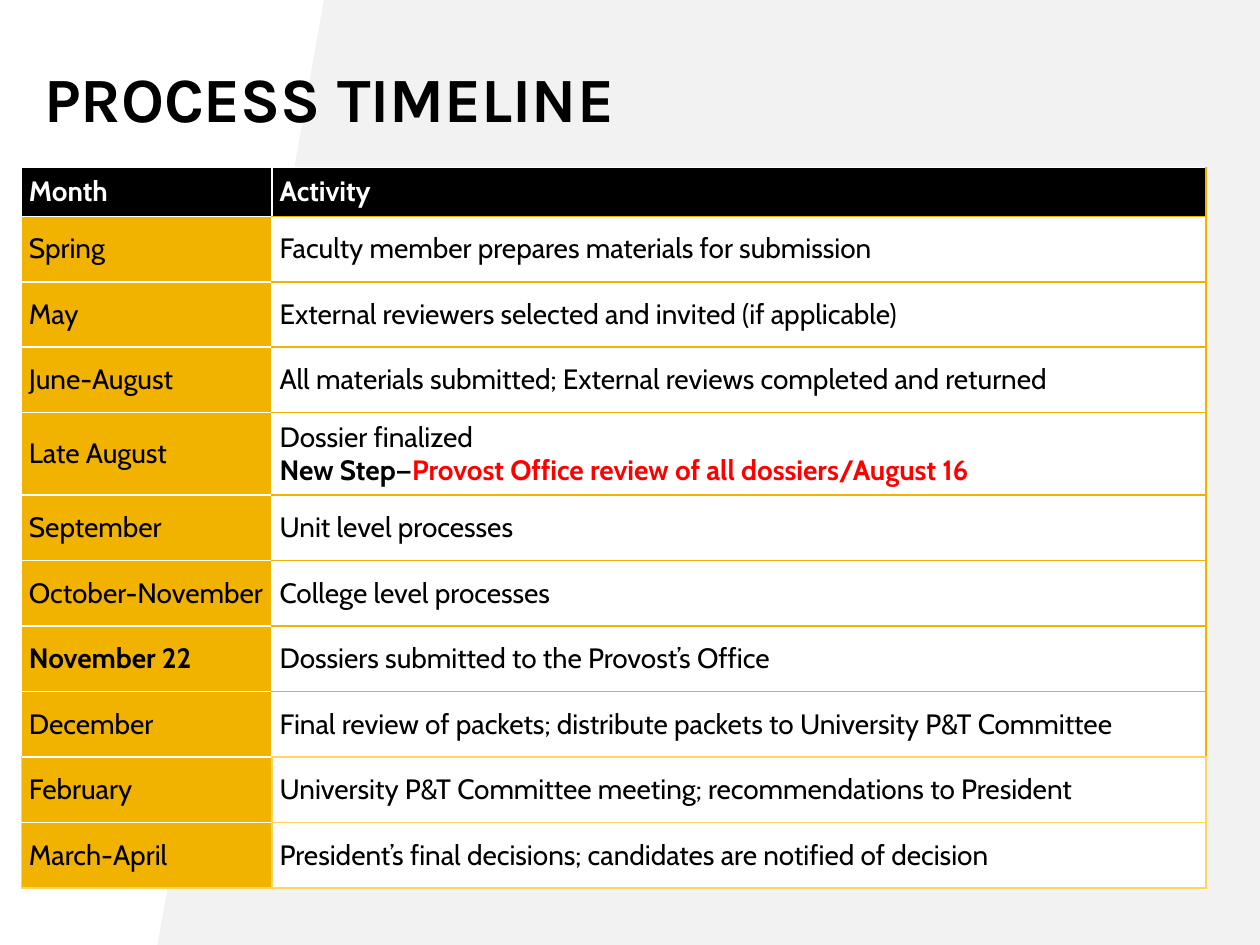
"""Build the process timeline slide."""
from lxml.etree import SubElement
from pptx import Presentation
from pptx.dml.color import RGBColor
from pptx.enum.text import MSO_ANCHOR, MSO_AUTO_SIZE
from pptx.oxml.ns import qn
from pptx.util import Inches, Pt

BLACK = RGBColor(0x00, 0x00, 0x00)
WHITE = RGBColor(0xFF, 0xFF, 0xFF)
GRAY = RGBColor(0xF2, 0xF2, 0xF2)
GOLD = RGBColor(0xF1, 0xB3, 0x00)
LIGHT_GOLD = RGBColor(0xFF, 0xD5, 0x5E)
RED = RGBColor(0xFF, 0x00, 0x00)

TITLE = "PROCESS TIMELINE"
HEADERS = ("Month", "Activity")
TIMELINE = [
    ("Spring", "Faculty member prepares materials for submission"),
    ("May", "External reviewers selected and invited (if applicable)"),
    ("June-August", "All materials submitted; External reviews completed and returned"),
    ("Late August", "Dossier finalized"),
    ("September", "Unit level processes"),
    ("October-November", "College level processes"),
    ("November 22", "Dossiers submitted to the Provost’s Office"),
    ("December", "Final review of packets; distribute packets to University P&T Committee"),
    ("February", "University P&T Committee meeting; recommendations to President"),
    ("March-April", "President’s final decisions; candidates are notified of decision"),
]
NEW_STEP = ("New Step—", "Provost Office review of all dossiers/August 16")
NEW_STEP_MONTH = "Late August"
BOLD_MONTH = "November 22"
LIGHT_MONTHS = ("February", "March-April")
LAST_MONTH = "March-April"

PANEL = [(0, 0), (2.57, 0), (1.25, 7.5), (0, 7.5)]
COLUMN_WIDTHS = (1.99, 7.41)
HEADER_HEIGHT, ROW_HEIGHT = 0.32, 0.52
CELL_INSET = 0.06


def add_text(para, text, size=16, font="Cabin", color=BLACK, bold=False):
    span = para.add_run()
    span.text = text
    span.font.size = Pt(size)
    span.font.name = font
    span.font.color.rgb = color
    span.font.bold = bold
    return span


def set_borders(cell, left, right, top, bottom):
    properties = cell._tc.get_or_add_tcPr()
    sides = {"a:lnL": left, "a:lnR": right, "a:lnT": top, "a:lnB": bottom}
    for position, (tag, color) in enumerate(sides.items()):
        line = properties.makeelement(qn(tag), {"w": str(Pt(1))})
        fill = SubElement(line, qn("a:solidFill"))
        SubElement(fill, qn("a:srgbClr"), val=str(color))
        properties.insert(position, line)


def style_cell(cell, fill, borders):
    cell.fill.solid()
    cell.fill.fore_color.rgb = fill
    cell.vertical_anchor = MSO_ANCHOR.MIDDLE
    cell.margin_left = cell.margin_right = Inches(CELL_INSET)
    cell.margin_top = cell.margin_bottom = Inches(CELL_INSET)
    set_borders(cell, *borders)
    return cell.text_frame.paragraphs[0]


def add_panel(page):
    builder = page.shapes.build_freeform(*map(Inches, PANEL[0]), scale=1.0)
    builder.add_line_segments([(Inches(x), Inches(y)) for x, y in PANEL[1:]])
    panel = builder.convert_to_shape()
    panel.shadow.inherit = False
    panel.fill.solid()
    panel.fill.fore_color.rgb = WHITE
    panel.line.fill.background()


def add_title(page):
    box = page.shapes.add_textbox(Inches(0.35), Inches(0.58), Inches(8.63), Inches(0.5))
    frame = box.text_frame
    frame.word_wrap = True
    frame.auto_size = MSO_AUTO_SIZE.SHAPE_TO_FIT_TEXT
    frame.margin_left = frame.margin_right = frame.margin_top = frame.margin_bottom = 0
    para = frame.paragraphs[0]
    para.line_spacing = Pt(35.6)
    add_text(para, TITLE, size=36, font="Karla", bold=True)


def add_timeline(page):
    height = HEADER_HEIGHT + ROW_HEIGHT * len(TIMELINE)
    table = page.shapes.add_table(
        len(TIMELINE) + 1, len(HEADERS), Inches(0.17), Inches(1.33),
        Inches(sum(COLUMN_WIDTHS)), Inches(height)).table
    for column, width in zip(table.columns, COLUMN_WIDTHS):
        column.width = Inches(width)
    for index, row in enumerate(table.rows):
        row.height = Inches(ROW_HEIGHT if index else HEADER_HEIGHT)

    header_borders = ((WHITE,) * 4, (WHITE, GOLD, WHITE, GOLD))
    for index, (header, borders) in enumerate(zip(HEADERS, header_borders)):
        para = style_cell(table.cell(0, index), BLACK, borders)
        add_text(para, header, color=WHITE, bold=True)

    for index, (month, activity) in enumerate(TIMELINE, start=1):
        light = month in LIGHT_MONTHS
        side = LIGHT_GOLD if light else WHITE
        base = LIGHT_GOLD if month == LAST_MONTH else WHITE
        para = style_cell(table.cell(index, 0), GOLD, (side, side, WHITE, base))
        add_text(para, month, bold=month == BOLD_MONTH)

        edge = LIGHT_GOLD if light else GOLD
        base = LIGHT_GOLD if light or month == "December" else GOLD
        cell = table.cell(index, 1)
        para = style_cell(cell, WHITE, (side, edge, edge, base))
        add_text(para, activity)
        if month == NEW_STEP_MONTH:
            para = cell.text_frame.add_paragraph()
            for text, color in zip(NEW_STEP, (BLACK, RED)):
                add_text(para, text, color=color, bold=True)


def main():
    deck = Presentation()
    deck.slide_width, deck.slide_height = Inches(10), Inches(7.5)
    page = deck.slides.add_slide(deck.slide_layouts[6])
    page.background.fill.solid()
    page.background.fill.fore_color.rgb = GRAY
    add_panel(page)
    add_title(page)
    add_timeline(page)
    deck.save("out.pptx")


if __name__ == "__main__":
    main()
